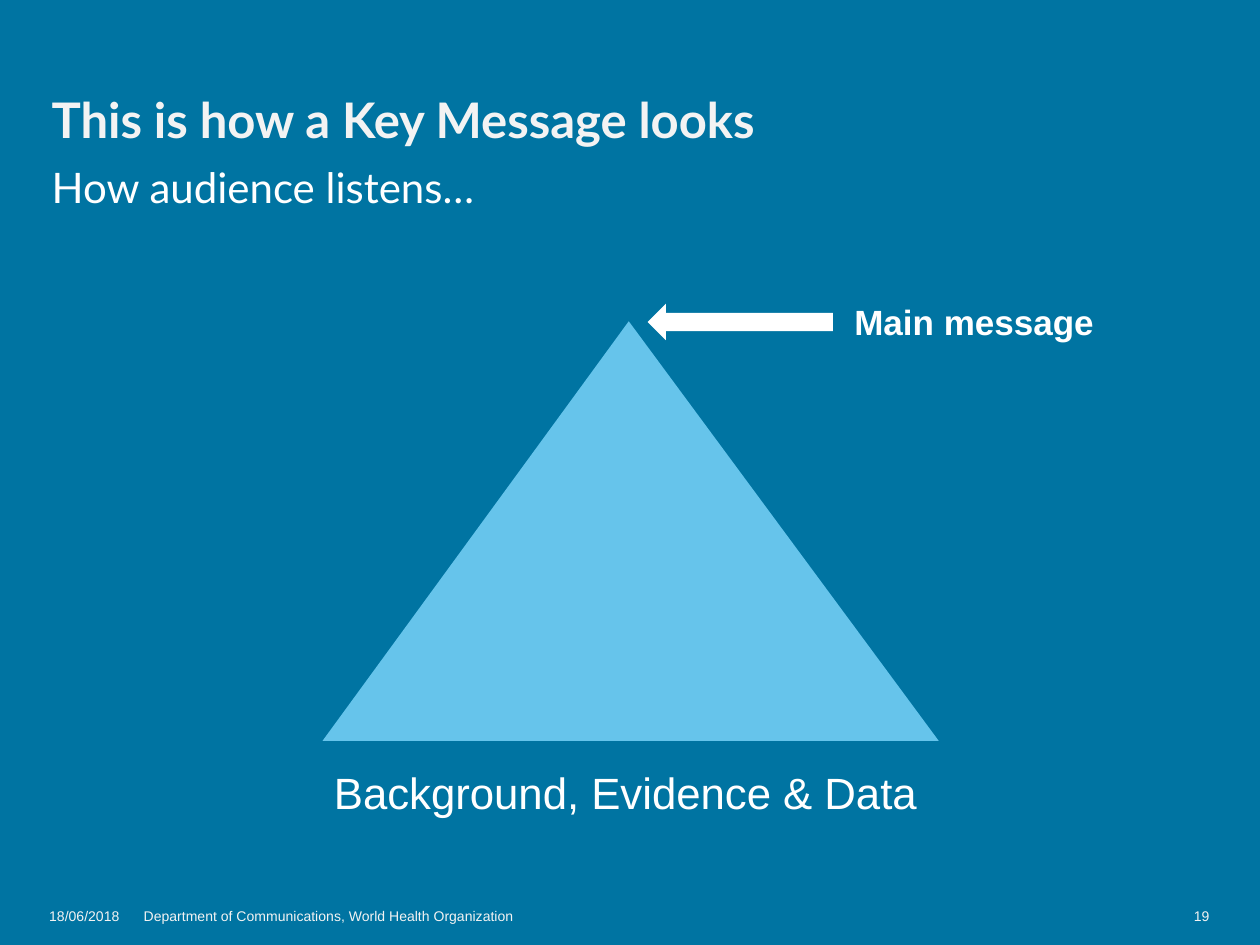
from dataclasses import dataclass

from lxml import etree
from pptx import Presentation
from pptx import util as u
from pptx.dml.color import RGBColor
from pptx.enum import shapes, text
from pptx.oxml import ns

Inches, Pt = u.Inches, u.Pt


@dataclass(frozen=True)
class Theme:
    back: str = "0074A2"
    accent: str = "66C4EB"
    white: str = "FFFFFF"
    pale: str = "F3F3F3"
    heading: str = "Lato"
    body: str = "Arial"
    title: int = 28
    subtitle: int = 24
    caption: int = 25
    label: int = 20
    footer: int = 8


def write(tf, value, *, size, color, font, bold=False, align="LEFT", anchor="TOP",
          insets=(0, 0, 0, 0), wrap=True, spacing=None):
    tf.auto_size = text.MSO_AUTO_SIZE.NONE
    tf.word_wrap = wrap
    tf.vertical_anchor = text.MSO_ANCHOR[anchor]
    tf.margin_left, tf.margin_top, tf.margin_right, tf.margin_bottom = map(Inches, insets)
    p = tf.paragraphs[0]
    p.alignment = text.PP_ALIGN[align]
    p.space_before = Pt(0)
    p.line_spacing = spacing
    r = p.add_run()
    r.text = value
    r.font.name, r.font.size, r.font.bold = font, Pt(size), bold
    r.font.color.rgb = RGBColor.from_string(color)


class Deck:
    """Holds the style and the current slide, and adds elements to it."""

    def __init__(self, prs, theme):
        self.theme = theme
        self.s = prs.slides.add_slide(prs.slide_layouts[1])
        fill = self.s.background.fill
        fill.solid()
        fill.fore_color.rgb = RGBColor.from_string(theme.back)

    def placeholder(self, idx, box, value, **fmt):
        sp = self.s.placeholders[idx]
        sp.left, sp.top, sp.width, sp.height = map(Inches, box)
        pPr = sp.text_frame.paragraphs[0]._p.get_or_add_pPr()
        pPr.set("marL", "0")
        pPr.set("indent", "0")
        etree.SubElement(pPr, ns.qn("a:buNone"))
        write(sp.text_frame, value, font=self.theme.heading, **fmt)

    def textbox(self, box, value, **fmt):
        sp = self.s.shapes.add_textbox(*map(Inches, box))
        write(sp.text_frame, value, font=self.theme.body, **fmt)

    def shape(self, kind, box, color, adjust):
        sp = self.s.shapes.add_shape(kind, *map(Inches, box))
        sp.adjustments[0] = adjust
        sp.shadow.inherit = False
        sp.fill.solid()
        sp.fill.fore_color.rgb = RGBColor.from_string(color)
        sp.line.fill.background()

    def footer(self, left, width, value, align="LEFT"):
        self.textbox((left, 7.2, width, 0.2), value, size=self.theme.footer,
                     color=self.theme.pale, align=align)


def main():
    prs = Presentation()
    prs.slide_width, prs.slide_height = Inches(10), Inches(7.5)
    t = Theme()
    deck = Deck(prs, t)
    kind = shapes.MSO_SHAPE
    padding = (0.09, 0.04, 0.09, 0.04)

    deck.placeholder(0, (0.39, 0.39, 6.69, 0.79), "This is how a Key Message looks",
                     size=t.title, color=t.pale, bold=True, anchor="BOTTOM",
                     insets=(0.02, 0, 0.39, 0), spacing=0.9)
    deck.placeholder(1, (0.39, 1.3, 6.69, 0.32), "How audience listens…",
                     size=t.subtitle, color=t.white, anchor="MIDDLE",
                     insets=(0.02, 0, 0.02, 0), spacing=1.1)

    deck.shape(kind.ISOSCELES_TRIANGLE, (2.56, 2.55, 4.89, 3.33), t.accent, 0.497)
    deck.shape(kind.LEFT_ARROW, (5.14, 2.41, 1.47, 0.29), t.white, 0.5)
    deck.textbox((2.56, 6.04, 4.95, 0.51), "Background, Evidence & Data",
                 size=t.caption, color=t.white, insets=padding, wrap=False)
    deck.textbox((6.69, 2.35, 2.37, 0.4), "Main message", size=t.label,
                 color=t.white, bold=True, anchor="MIDDLE", insets=padding)

    deck.footer(0.39, 0.65, "18/06/2018")
    deck.footer(1.14, 3.88, "Department of Communications, World Health Organization")
    deck.footer(9.36, 0.24, "19", align="RIGHT")
    prs.save("out.pptx")


if __name__ == "__main__":
    main()
